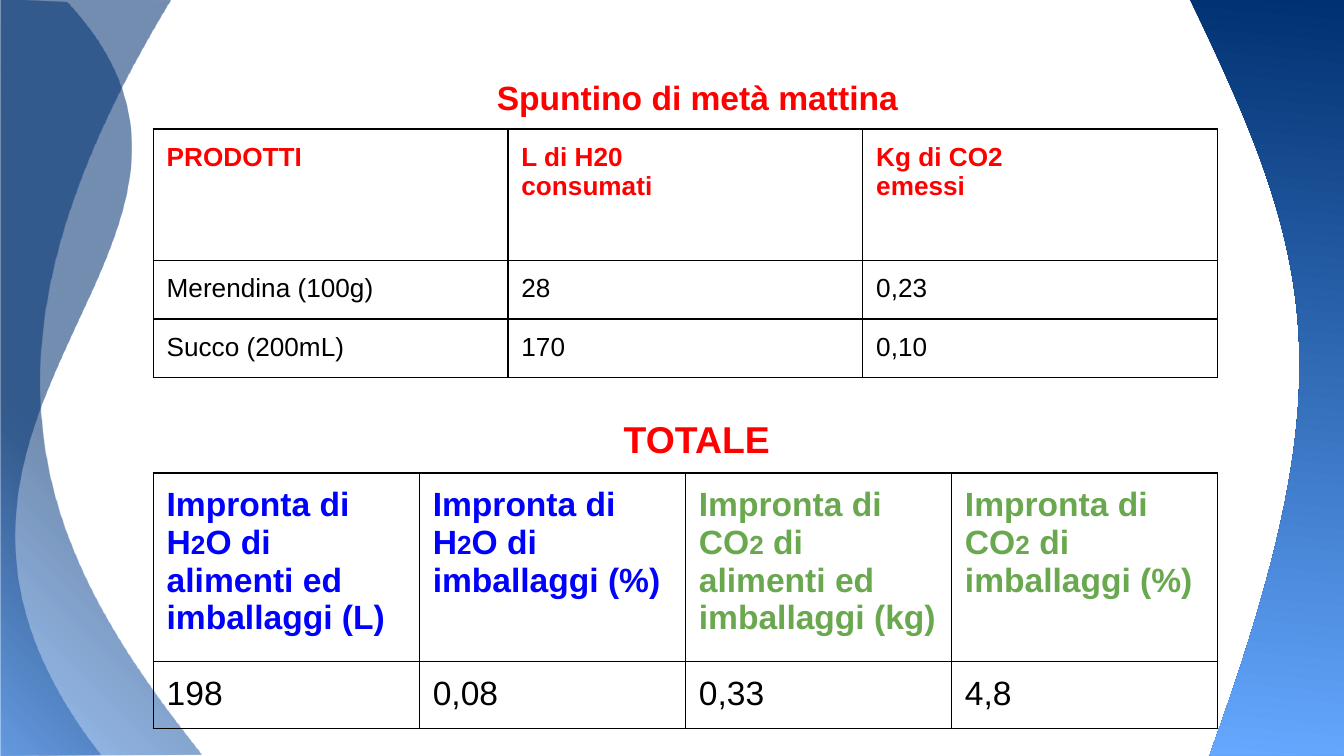
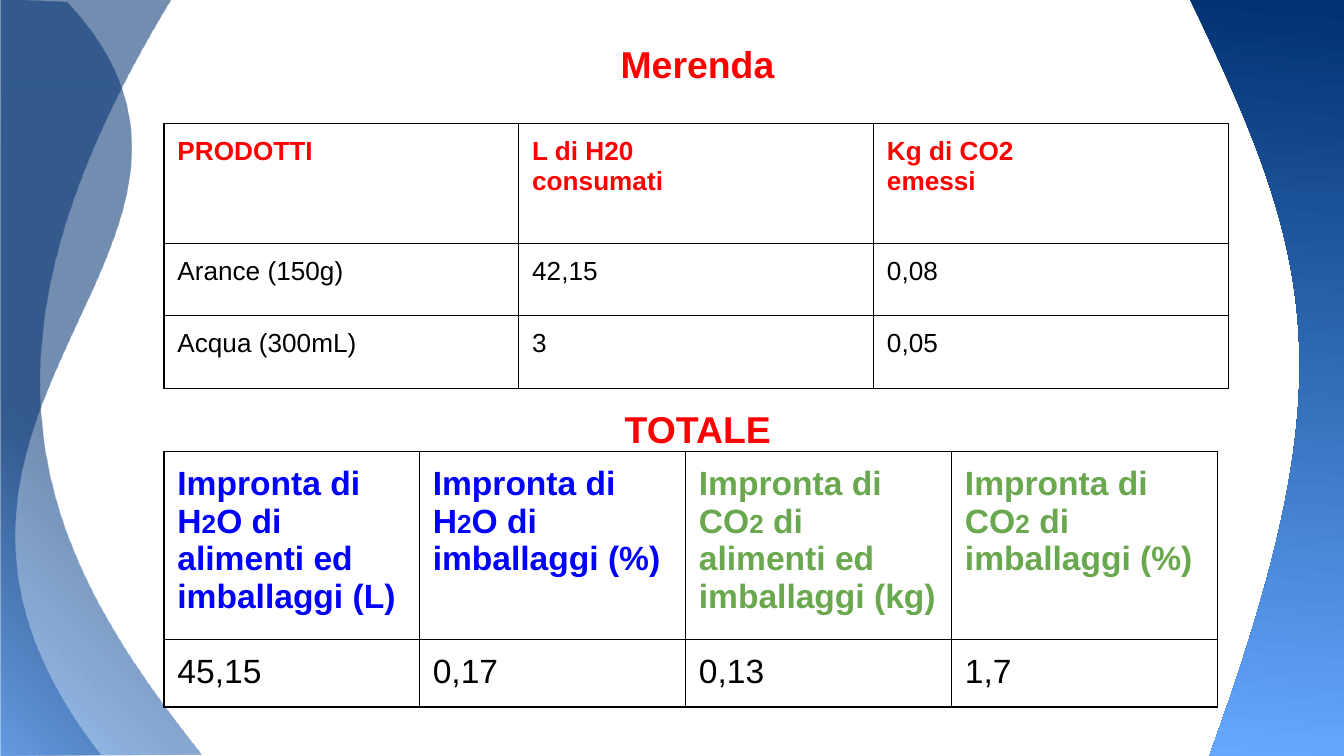
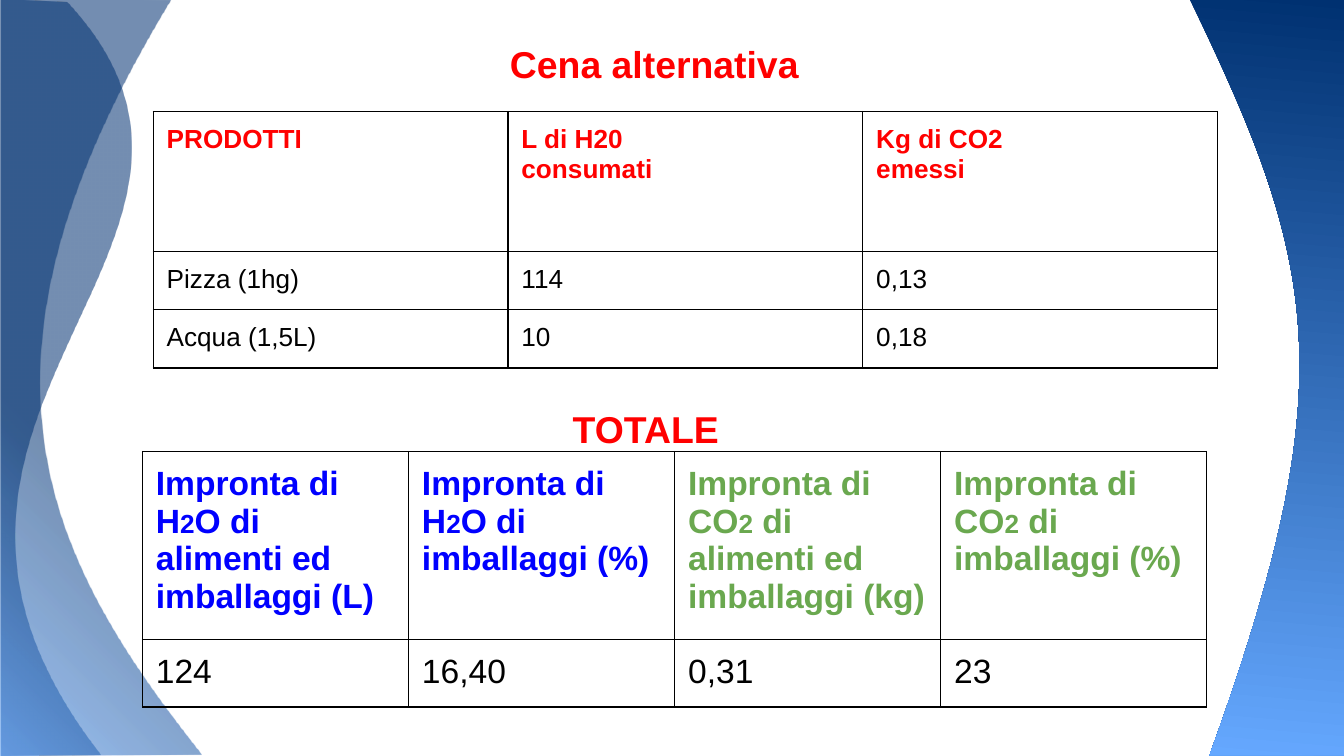
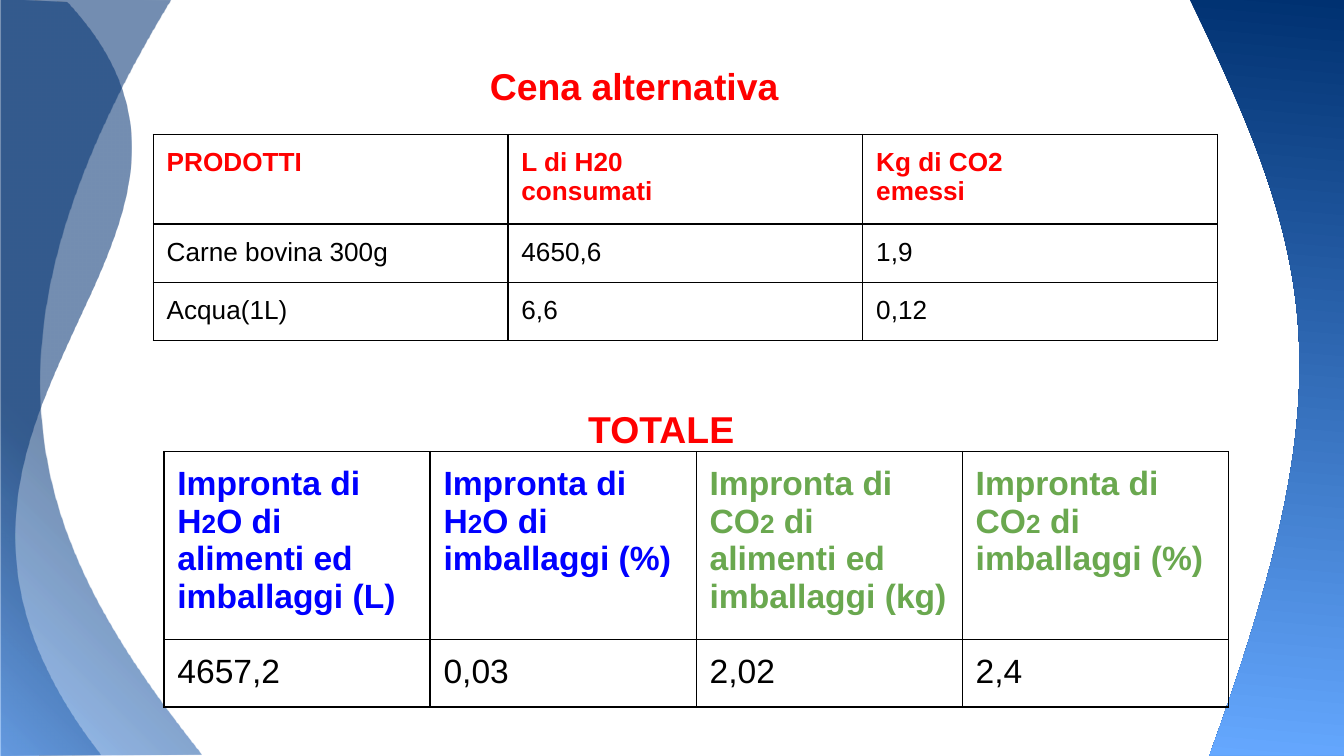
from dataclasses import dataclass

from pptx import Presentation
from pptx import oxml
from pptx.dml.color import RGBColor
from pptx.enum import text
from pptx.oxml import ns
from pptx.util import Inches, Pt

RED = RGBColor(0xFF, 0x00, 0x00)
BLUE = RGBColor(0x00, 0x00, 0xFF)
GREEN = RGBColor(0x6A, 0xA8, 0x4F)
BLACK = RGBColor(0x00, 0x00, 0x00)
NAVY = RGBColor(0x00, 0x31, 0x71)
SKY = RGBColor(0x54, 0x9F, 0xFF)
AZURE = RGBColor(0x65, 0xA8, 0xFF)

FONT = "Arial"
PAD = Inches(0.1)
CENTER = text.PP_ALIGN.CENTER
LEFT = text.PP_ALIGN.LEFT
GLOW = '<a:path path="circle"><a:fillToRect t="100000" r="100000"/></a:path>'
FALL = '<a:lin ang="5700000" scaled="0"/>'


@dataclass(frozen=True)
class Stop:
    pos: int
    color: RGBColor
    alpha: int = 100


@dataclass(frozen=True)
class Wave:
    points: tuple
    bend: int
    stops: tuple
    shade: str


@dataclass(frozen=True)
class Run:
    words: str
    size: int
    color: RGBColor = BLACK
    bold: bool = False


@dataclass(frozen=True)
class Label:
    words: str
    left: float
    top: float
    width: float
    height: float
    size: int = 20
    align: text.PP_ALIGN = CENTER


@dataclass(frozen=True)
class Grid:
    left: float
    top: float
    cols: tuple
    rows: tuple
    cells: list


@dataclass(frozen=True)
class Meal:
    title: Label
    foods: tuple
    left: float
    top: float
    rows: tuple
    total: Label
    sums: tuple
    start: float
    head: float
    base: float = 3.36
    first: float = 1.98


MIST = (Stop(0, SKY, 54), Stop(41, NAVY, 54), Stop(100, NAVY, 54))
WAVES = (
    Wave(((1.5, 5.61), (-0.01, 5.62), (0, -0.02), (1.27, 0),
          (-0.38, 2.72), (0.33, 4.13), (1.5, 5.61)), 3, MIST, GLOW),
    Wave(((0.75, 5.61), (0.01, 5.62), (0.01, 0), (0.5, 0.02),
          (2.17, 1.82), (-1.22, 3.08), (0.75, 5.61)), 3, MIST, GLOW),
    Wave(((10.05, 5.62), (9, 5.62), (10.01, 2.84), (9.81, 1.96),
          (8.85, -0.01), (10.05, -0.01), (10.05, 5.62)), 1,
         (Stop(0, NAVY), Stop(100, AZURE)), FALL),
)

HEADS = (("PRODOTTI",), ("L di H20", "consumati"), ("Kg di CO2", "emessi"))
PRINTS = (
    (BLUE, "H", "O di alimenti ed imballaggi (L)"),
    (BLUE, "H", "O di imballaggi (%)"),
    (GREEN, "CO", " di alimenti ed imballaggi (kg)"),
    (GREEN, "CO", " di imballaggi (%)"),
)

MEALS = (
    Meal(Label("Spuntino di metà mattina", 3.19, 0.47, 4, 0.5, 18),
         (("Merendina (100g)", "28", "0,23"), ("Succo (200mL)", "170", "0,10")),
         1.14, 0.96, (0.98, 0.42, 0.42),
         Label("TOTALE", 4.32, 3.05, 1.73, 0.44),
         ("198", "0,08", "0,33", "4,8"), 1.14, 0.79, base=3.52),
    Meal(Label("Merenda", 3.19, 0.21, 4, 0.5),
         (("Arance (150g)", "42,15", "0,08"), ("Acqua (300mL)", "3", "0,05")),
         1.22, 0.92, (0.89, 0.54, 0.54),
         Label("TOTALE", 4.55, 2.97, 1.5, 0.44, align=LEFT),
         ("45,15", "0,17", "0,13", "1,7"), 1.22, 0.42, first=1.9),
    Meal(Label("Cena alternativa", 2.87, 0.21, 4, 0.5),
         (("Pizza (1hg)", "114", "0,13"), ("Acqua (1,5L)", "10", "0,18")),
         1.14, 0.83, (1.04, 0.42, 0.29),
         Label("TOTALE", 3.98, 2.97, 1.65, 0.44),
         ("124", "16,40", "0,31", "23"), 1.06, 1.16),
    Meal(Label("Cena alternativa", 2.72, 0.37, 4, 0.5),
         (("Carne bovina 300g", "4650,6", "1,9"), ("Acqua(1L)", "6,6", "0,12")),
         1.14, 1, (0.62, 0.42, 0.42),
         Label("TOTALE", 3.74, 2.97, 2.36, 0.44),
         ("4657,2", "0,03", "2,02", "2,4"), 1.22, 0.88),
)


def shade(wave: Wave):
    stops = "".join(
        f'<a:gs pos="{s.pos * 1000}"><a:srgbClr val="{s.color}">'
        f'<a:alpha val="{s.alpha * 1000}"/></a:srgbClr></a:gs>'
        for s in wave.stops)
    return oxml.parse_xml(
        f'<a:gradFill {ns.nsdecls("a")} rotWithShape="1">'
        f'<a:gsLst>{stops}</a:gsLst>{wave.shade}</a:gradFill>')


def draw_wave(slide, wave: Wave):
    start, *rest = [(Inches(x), Inches(y)) for x, y in wave.points]
    pen = slide.shapes.build_freeform(*start)
    pen.add_line_segments(rest, close=True)
    shape = pen.convert_to_shape()
    shape.shadow.inherit = False
    shape.line.fill.background()
    shape.fill.background()
    blank = shape.element.spPr.find(ns.qn("a:noFill"))
    blank.getparent().replace(blank, shade(wave))
    lines = list(shape.element.iter(ns.qn("a:lnTo")))[wave.bend:wave.bend + 3]
    curve = oxml.parse_xml(f'<a:cubicBezTo {ns.nsdecls("a")}/>')
    lines[0].addprevious(curve)
    for line in lines:
        curve.append(line[0])
        line.getparent().remove(line)
    return shape


def write(para, runs: list[Run]) -> None:
    para.line_spacing = 1.0
    para.space_before = para.space_after = Pt(0)
    for item in runs:
        run = para.add_run()
        run.text = item.words
        run.font.size = Pt(item.size)
        run.font.bold = item.bold
        run.font.color.rgb = item.color
        run.font.name = FONT
        props = run.font._element
        for kind in ("ea", "cs"):
            props.append(oxml.parse_xml(
                f'<a:{kind} {ns.nsdecls("a")} typeface="{FONT}"/>'))


def draw_label(slide, label: Label, grow: bool = False) -> None:
    spot = [Inches(v) for v in (label.left, label.top, label.width, label.height)]
    frame = slide.shapes.add_textbox(*spot).text_frame
    frame.word_wrap = True
    if grow:
        frame.auto_size = text.MSO_AUTO_SIZE.SHAPE_TO_FIT_TEXT
    else:
        frame.margin_top = frame.margin_bottom = PAD
    para = frame.paragraphs[0]
    para.alignment = label.align
    write(para, [Run(label.words, label.size, RED, True)])


def frame_cell(cell) -> None:
    cell.margin_left = cell.margin_right = PAD
    cell.margin_top = cell.margin_bottom = PAD
    cell.fill.background()
    props = cell._tc.get_or_add_tcPr()
    for index, side in enumerate("LRTB"):
        props.insert(index, oxml.parse_xml(
            f'<a:ln{side} {ns.nsdecls("a")} w="{Pt(0.75)}"><a:solidFill>'
            f'<a:srgbClr val="{BLACK}"/></a:solidFill></a:ln{side}>'))


def draw_grid(slide, grid: Grid) -> None:
    table = slide.shapes.add_table(
        len(grid.rows), len(grid.cols), Inches(grid.left), Inches(grid.top),
        Inches(sum(grid.cols)), Inches(sum(grid.rows))).table
    table.first_row = table.horz_banding = False
    for col, width in zip(table.columns, grid.cols):
        col.width = Inches(width)
    for row, height, items in zip(table.rows, grid.rows, grid.cells):
        row.height = Inches(height)
        for cell, paras in zip(row.cells, items):
            frame_cell(cell)
            frame = cell.text_frame
            for index, runs in enumerate(paras):
                write(frame.add_paragraph() if index else frame.paragraphs[0], runs)


def food_grid(meal: Meal) -> Grid:
    head = [[[Run(line, 14, RED, True)] for line in lines] for lines in HEADS]
    body = [[[[Run(word, 14)]] for word in food] for food in meal.foods]
    return Grid(meal.left, meal.top, (2.64,) * 3, meal.rows, [head, *body])


def sum_grid(meal: Meal) -> Grid:
    head = [[[Run(f"Impronta di {atom}", 18, color, True),
              Run("2", 14, color, True),
              Run(tail, 18, color, True)]] for color, atom, tail in PRINTS]
    body = [[[Run(word, 18)]] for word in meal.sums]
    cols = (meal.first,) + (1.98,) * 3
    return Grid(meal.start, meal.base, cols, (meal.head, 0.42), [head, body])


def main() -> None:
    deck = Presentation()
    deck.slide_width = Inches(10)
    deck.slide_height = Inches(10) * 9 // 16
    blank = deck.slide_layouts[6]
    slides = [deck.slides.add_slide(blank) for _ in MEALS]
    for wave in WAVES:
        deck.slide_master.shapes.element.append(draw_wave(slides[0], wave).element)
    for slide, meal in zip(slides, MEALS):
        draw_label(slide, meal.title)
        draw_grid(slide, food_grid(meal))
        draw_grid(slide, sum_grid(meal))
        draw_label(slide, meal.total, grow=True)
    deck.save("out.pptx")


if __name__ == "__main__":
    main()
